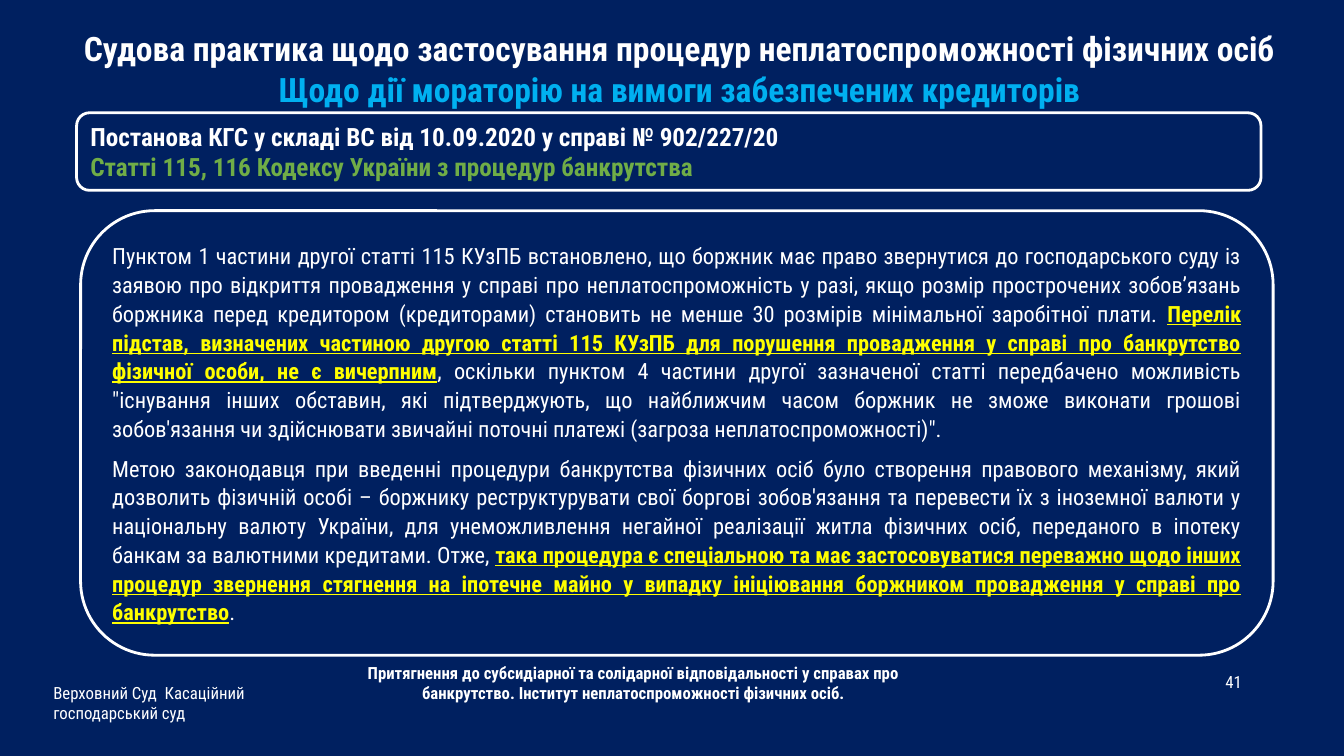
"""Build a slide on the moratorium in insolvency cases of natural persons."""
from dataclasses import dataclass

from pptx import Presentation
from pptx import util as u
from pptx.dml.color import RGBColor
from pptx.enum import shapes, text


@dataclass(frozen=True)
class Theme:
    """Colours, font and type sizes."""
    navy: str = "002060"
    white: str = "FFFFFF"
    blue: str = "00B0F0"
    green: str = "70AD47"
    yellow: str = "FFFF00"
    font: str = "Roboto Condensed"
    title: int = 24
    case: int = 18
    body: int = 16
    footer: int = 12
    outline: int = 2


THEME = Theme()
ALIGN = text.PP_ALIGN
PLAIN = (THEME.white, False, False)
BOLD = (THEME.white, True, False)
KEY = (THEME.yellow, True, True)

TITLE = [
    [("Судова практика щодо застосування процедур неплатоспроможності фізичних осіб", BOLD)],
    [("Щодо дії мораторію на вимоги забезпечених кредиторів", (THEME.blue, True, False))],
]
CASE = [
    [("Постанова КГС у складі ВС від 10.09.2020 у справі № 902/227/20", BOLD)],
    [("Статті 115, 116 Кодексу України з процедур банкрутства", (THEME.green, True, False))],
]
REASONING = [
    [
        ("Пунктом 1 частини другої статті 115 КУзПБ встановлено, що боржник має право "
         "звернутися до господарського суду із заявою про відкриття провадження у справі про "
         "неплатоспроможність у разі, якщо розмір прострочених зобов’язань боржника перед "
         "кредитором (кредиторами) становить не менше 30 розмірів мінімальної заробітної "
         "плати. ", PLAIN),
        ("Перелік підстав, визначених частиною другою статті 115 КУзПБ для порушення "
         "провадження у справі про банкрутство фізичної особи, не є вичерпним", KEY),
        (", оскільки пунктом 4 частини другої зазначеної статті передбачено можливість "
         "\"існування інших обставин, які підтверджують, що найближчим часом боржник не зможе "
         "виконати грошові зобов'язання чи здійснювати звичайні поточні платежі (загроза "
         "неплатоспроможності)\".", PLAIN),
    ],
    [
        ("Метою законодавця при введенні процедури банкрутства фізичних осіб було створення "
         "правового механізму, який дозволить фізичній особі – боржнику реструктурувати свої "
         "боргові зобов'язання та перевести їх з іноземної валюти у національну валюту "
         "України, для унеможливлення негайної реалізації житла фізичних осіб, переданого в "
         "іпотеку банкам за валютними кредитами. Отже, ", PLAIN),
        ("така процедура є спеціальною та має застосовуватися переважно щодо інших процедур "
         "звернення стягнення на іпотечне майно у випадку ініціювання боржником провадження у "
         "справі про банкрутство", KEY),
        (".", PLAIN),
    ],
]
FOOTER_TOP = 475.2
FOOTERS = [
    (31, 182.9, 54, ALIGN.LEFT, "Верховний Суд  Касаційний господарський суд", PLAIN),
    (250.6, 403.9, 25.2, ALIGN.CENTER,
     "Притягнення до субсидіарної та солідарної відповідальності у справах про "
     "банкрутство. Інститут неплатоспроможності фізичних осіб.", BOLD),
    (678.2, 216, 23.8, ALIGN.RIGHT, "41", PLAIN),
]
TITLE_PLACE = (31, 16.6, 908.6, 65.5)
CARDS = [
    ((54.7, 80.6, 846, 55.4), CASE, THEME.case, ALIGN.LEFT, {}),
    ((57.6, 150.5, 851.8, 317.5), REASONING, THEME.body, ALIGN.JUSTIFY,
     {"line_spacing": 1.07, "space_after": u.Pt(8)}),
]


def colour(code):
    """Turn a hex code into a colour."""
    return RGBColor.from_string(code)


def points(place):
    """Turn left, top, width and height into lengths."""
    return [u.Pt(value) for value in place]


def write(box, paragraphs, size, align, anchor=text.MSO_ANCHOR.MIDDLE, spacing=None):
    """Fill a box with styled paragraphs."""
    frame = box.text_frame
    frame.word_wrap = True
    frame.auto_size = text.MSO_AUTO_SIZE.NONE
    frame.vertical_anchor = anchor
    for index, spans in enumerate(paragraphs):
        para = frame.add_paragraph() if index else frame.paragraphs[0]
        para.alignment = align
        for name, value in (spacing or {}).items():
            setattr(para, name, value)
        for words, (shade, bold, underline) in spans:
            span = para.add_run()
            span.text = words
            span.font.name = THEME.font
            span.font.size = u.Pt(size)
            span.font.bold = bold
            span.font.underline = underline
            span.font.color.rgb = colour(shade)


def add_card(page, place, paragraphs, size, align, spacing):
    """Add a rounded, outlined card with text."""
    card = page.shapes.add_shape(shapes.MSO_SHAPE.ROUNDED_RECTANGLE, *points(place))
    card.shadow.inherit = False
    card.fill.solid()
    card.fill.fore_color.rgb = colour(THEME.navy)
    card.line.color.rgb = colour(THEME.white)
    card.line.width = u.Pt(THEME.outline)
    write(card, paragraphs, size, align, spacing=spacing)


def main():
    """Build and save the deck."""
    deck = Presentation()
    deck.slide_width, deck.slide_height = u.Pt(960), u.Pt(540)
    page = deck.slides.add_slide(deck.slide_layouts[5])
    page.background.fill.solid()
    page.background.fill.fore_color.rgb = colour(THEME.navy)

    title = page.shapes.title
    title.left, title.top, title.width, title.height = points(TITLE_PLACE)
    write(title, TITLE, THEME.title, ALIGN.CENTER, text.MSO_ANCHOR.TOP)

    for card in CARDS:
        add_card(page, *card)
    for left, width, height, align, words, style in FOOTERS:
        box = page.shapes.add_textbox(*points((left, FOOTER_TOP, width, height)))
        write(box, [[(words, style)]], THEME.footer, align)
    deck.save("out.pptx")


if __name__ == "__main__":
    main()
